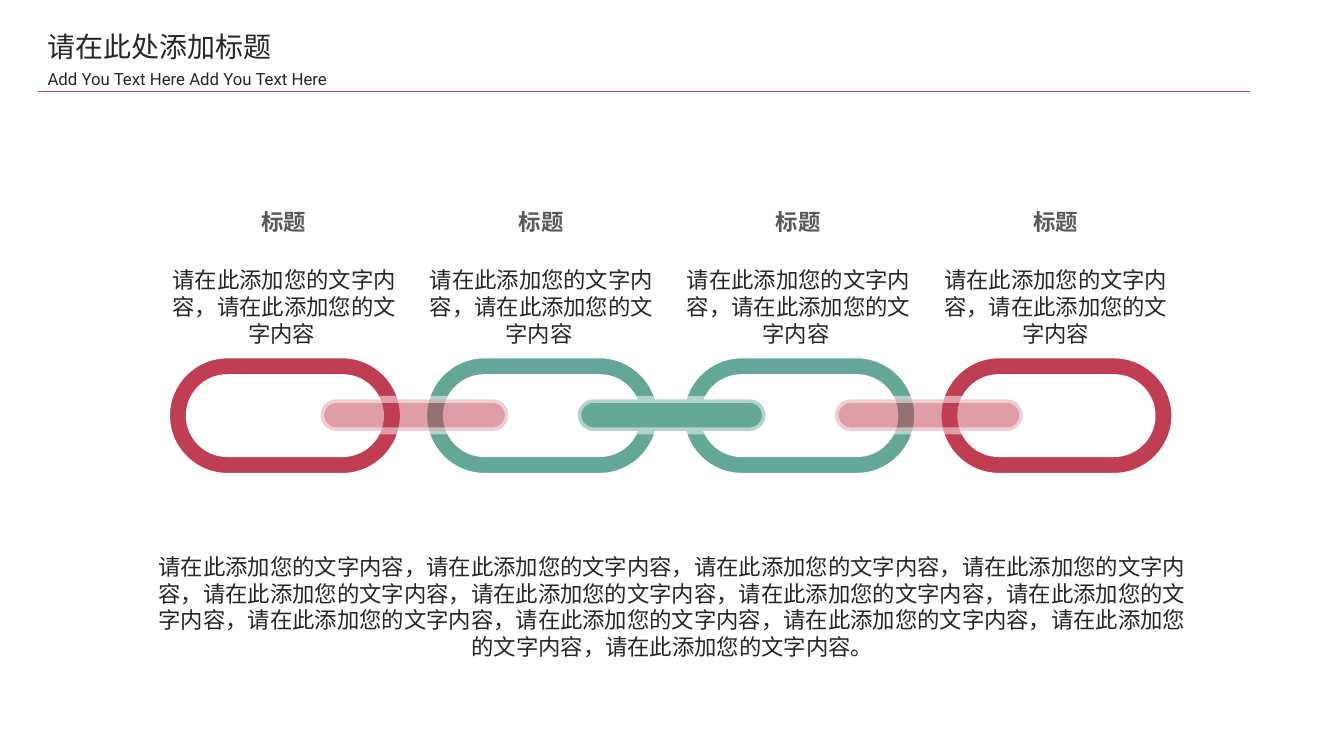
from lxml.etree import Element, SubElement
from pptx import Presentation
from pptx.dml.color import RGBColor
from pptx.enum.shapes import MSO_CONNECTOR as Connector
from pptx.enum.text import MSO_ANCHOR as Anchor, PP_ALIGN as Align
from pptx.oxml.ns import qn
from pptx.util import Pt

RED, GREEN, WHITE = "C03E51", "64A797", "FFFFFF"
INK, GREY = "262626", "595959"
PITCH = 183.7
RING_LEFT, RING_TOP, RING_WIDTH, RING_HEIGHT, BAND = 118.9, 253.5, 169.2, 86.8, 16.3
PIN_LEFT, PIN_TOP, PIN_WIDTH, PIN_HEIGHT = 229, 285.3, 134.1, 22.5
UNITS = 100
ROUNDNESS = 0.55


def color(value):
    return RGBColor.from_string(value)


def stadium(left, top, width, height):
    radius = height / 2
    right, bottom, middle = left + width, top + height, top + radius
    anchors = ((left + radius, top), (right - radius, top), (right, middle),
               (right - radius, bottom), (left + radius, bottom), (left, middle),
               (left + radius, top))
    return [(x * UNITS, y * UNITS) for x, y in anchors]


def round_ends(shape):
    for outline in shape._element.spPr.iter(qn("a:path")):
        side = 0
        here = None
        for command in list(outline):
            if command.tag == qn("a:close"):
                continue
            there = [int(command[0].get(axis)) for axis in ("x", "y")]
            if command.tag == qn("a:moveTo"):
                side = 0
            else:
                if side % 3:
                    first = side % 3 - 1
                    start_pull, end_pull = list(here), list(there)
                    reach = there[first] - here[first]
                    start_pull[first] += round(reach * ROUNDNESS)
                    other = 1 - first
                    end_pull[other] -= round((there[other] - here[other]) * ROUNDNESS)
                    curve = Element(qn("a:cubicBezTo"))
                    for x, y in (start_pull, end_pull, there):
                        SubElement(curve, qn("a:pt"), x=str(x), y=str(y))
                    outline.replace(command, curve)
                side += 1
            here = there


class ChainSlide:
    font_name = "Roboto"
    outline = 5

    def __init__(self, slide):
        self.shapes = slide.shapes

    def paint(self, shape, fill, opacity=None, line_opacity=None):
        shape.shadow.inherit = False
        shape.fill.solid()
        shape.fill.fore_color.rgb = color(fill)
        shape.line.color.rgb = color(WHITE)
        shape.line.width = Pt(self.outline)
        properties = shape._element.spPr
        for parent, share in ((properties, opacity), (properties.find(qn("a:ln")), line_opacity)):
            if share is not None:
                tint = parent.find(qn("a:solidFill"))[0]
                SubElement(tint, qn("a:alpha")).set("val", str(share * 1000))

    def rounded(self, *contours):
        builder = self.shapes.build_freeform(*contours[0][0], scale=Pt(1) / UNITS)
        builder.add_line_segments(contours[0][1:], close=True)
        for contour in contours[1:]:
            builder.move_to(*contour[0])
            builder.add_line_segments(contour[1:], close=True)
        shape = builder.convert_to_shape()
        round_ends(shape)
        return shape

    def ring(self, left, fill):
        outer = stadium(left, RING_TOP, RING_WIDTH, RING_HEIGHT)
        hole = stadium(left + BAND, RING_TOP + BAND,
                       RING_WIDTH - 2 * BAND, RING_HEIGHT - 2 * BAND)
        self.paint(self.rounded(outer, hole), fill)

    def pin(self, left, fill, opacity):
        bar = self.rounded(stadium(left, PIN_TOP, PIN_WIDTH, PIN_HEIGHT))
        self.paint(bar, fill, opacity, 50)

    def text(self, words, left, top, width, height, size=16, ink=INK, bold=False,
             align=Align.CENTER, wrap=True, spacing=None):
        frame = self.shapes.add_textbox(Pt(left), Pt(top), Pt(width), Pt(height)).text_frame
        frame.word_wrap = wrap
        frame.vertical_anchor = Anchor.TOP
        paragraph = frame.paragraphs[0]
        paragraph.alignment = align
        paragraph.line_spacing = spacing
        run = paragraph.add_run()
        run.text = words
        formats = {"name": self.font_name, "size": Pt(size), "bold": bold}
        for attribute, value in formats.items():
            setattr(run.font, attribute, value)
        run.font.color.rgb = color(ink)

    def rule(self, left, right, y, ink, weight):
        line = self.shapes.add_connector(Connector.STRAIGHT, Pt(left), Pt(y), Pt(right), Pt(y))
        line.line.color.rgb = color(ink)
        line.line.width = Pt(weight)
        SubElement(line._element.spPr, qn("a:effectLst"))


def main():
    deck = Presentation()
    deck.slide_width, deck.slide_height = Pt(960), Pt(540)
    chain = ChainSlide(deck.slides.add_slide(deck.slide_layouts[6]))

    for index, fill in enumerate((RED, GREEN, GREEN, RED)):
        chain.ring(RING_LEFT + index * PITCH, fill)
    for index, (fill, opacity) in enumerate(((RED, 50), (GREEN, None), (RED, 50))):
        chain.pin(PIN_LEFT + index * PITCH, fill, opacity)

    phrase = "请在此添加您的文字内容"
    for index, ending in enumerate((" ", " ", " ", "")):
        shift = index * PITCH
        chain.text("标题", 179.4 + shift, 145.4, 46.8, 26.6, ink=GREY, bold=True, wrap=False)
        chain.text("，".join([phrase] * 2) + ending, 109.9 + shift, 186.5, 186.4, 66)

    chain.text("，".join([phrase] * 13) + "。", 101.7, 391.3, 757.4, 84.4)
    chain.text("请在此处添加标题", 26.9, 17.6, 198, 31.7, size=20, align=Align.LEFT)
    chain.text("Add You Text Here Add You Text Here", 26.9, 41.4, 240.5, 24.5,
               size=12, align=Align.LEFT, spacing=1.3)
    chain.rule(27, 892.8, 65.2, RED, 0.5)

    deck.save("out.pptx")


if __name__ == "__main__":
    main()
